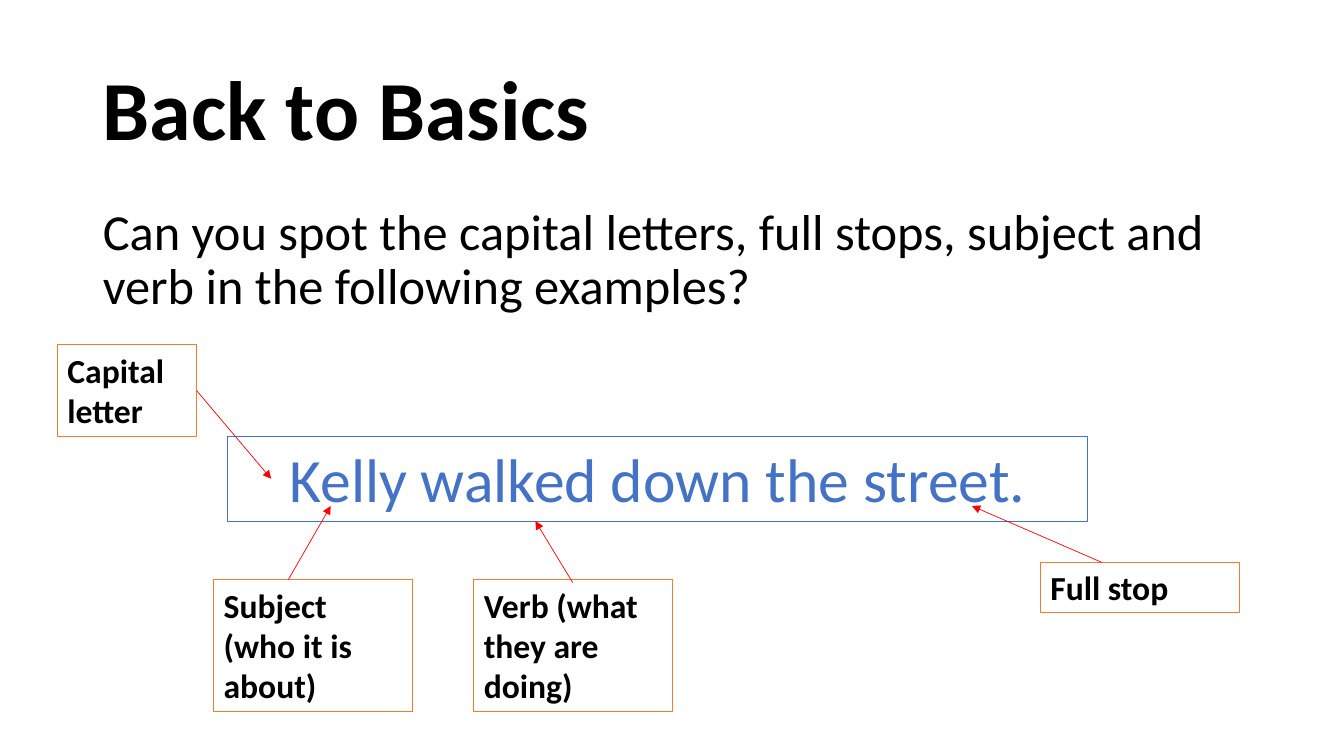
"""Build the "Back to Basics" sentence-parts slide."""
import lxml.etree
import pptx
import pptx.dml.color
import pptx.enum.shapes
import pptx.enum.text
import pptx.oxml.ns
import pptx.util

Inches = pptx.util.Inches
Alignment = pptx.enum.text.PP_ALIGN
Anchor = pptx.enum.text.MSO_ANCHOR
AutoSize = pptx.enum.text.MSO_AUTO_SIZE
qualified = pptx.oxml.ns.qn

COLORS = {"text": "000000", "sentence": "4472C4", "label": "ED7D31", "arrow": "FF0000"}


def color(name):
    return pptx.dml.color.RGBColor.from_string(COLORS[name])


def write_text(shape, text, size, color_name="text", bold=False, align=Alignment.LEFT,
               anchor=Anchor.TOP, auto_size=AutoSize.NONE, line_spacing=1.0, space_before=0):
    frame = shape.text_frame
    frame.word_wrap = True
    frame.auto_size = auto_size
    frame.vertical_anchor = anchor
    paragraph = frame.paragraphs[0]
    paragraph.alignment = align
    paragraph.line_spacing = line_spacing
    paragraph.space_before = pptx.util.Pt(space_before)
    run = paragraph.add_run()
    run.text = text
    run.font.name = "Calibri"
    run.font.size = pptx.util.Pt(size)
    run.font.bold = bold
    run.font.color.rgb = color(color_name)
    return paragraph


presentation = pptx.Presentation()
presentation.slide_width = Inches(13.33)
presentation.slide_height = Inches(7.5)
slide = presentation.slides.add_slide(presentation.slide_layouts[1])

title = slide.shapes.title
body = slide.placeholders[1]
for placeholder, top, height in [(title, 0.4, 1.45), (body, 2, 1.26)]:
    placeholder.left, placeholder.top = Inches(0.92), Inches(top)
    placeholder.width, placeholder.height = Inches(11.5), Inches(height)

write_text(title, "Back to Basics", size=60, bold=True, anchor=Anchor.MIDDLE, line_spacing=0.9)
question = write_text(
    body, "Can you spot the capital letters, full stops, subject and verb in the following examples?",
    size=36, line_spacing=0.9, space_before=10)
properties = question._p.get_or_add_pPr()
properties.set("marL", "0")
properties.set("indent", "0")
lxml.etree.SubElement(properties, qualified("a:buNone"))

label_format = {"size": 24, "bold": True}
sentence_format = {"size": 44, "color_name": "sentence", "align": Alignment.CENTER}
boxes = [
    ("Kelly walked down the street.", 2.26, 4.33, 8.53, 0.84, "sentence", sentence_format),
    ("Capital letter", 0.57, 3.42, 1.38, 0.91, "label", label_format),
    ("Subject (who it is about)", 2.12, 5.75, 1.97, 1.31, "label", label_format),
    ("Verb (what they are doing)", 4.7, 5.75, 1.97, 1.31, "label", label_format),
    ("Full stop", 10.32, 5.58, 1.97, 0.5, "label", label_format),
]
shapes = {}
for text, left, top, width, height, outline, text_format in boxes:
    box = slide.shapes.add_shape(pptx.enum.shapes.MSO_SHAPE.RECTANGLE,
                                 Inches(left), Inches(top), Inches(width), Inches(height))
    box.shadow.inherit = False
    box.fill.background()
    box.line.color.rgb = color(outline)
    box.line.width = pptx.util.Pt(0.75)
    write_text(box, text, auto_size=AutoSize.SHAPE_TO_FIT_TEXT, **text_format)
    shapes[text] = box

arrows = [
    (1.95, 3.87, 2.69, 4.75, "Capital letter"),
    (2.86, 5.75, 3.28, 5.02, None),
    (5.68, 5.78, 5.31, 5.17, None),
    (10.93, 5.58, 9.64, 5.02, None),
]
for start_x, start_y, end_x, end_y, source in arrows:
    arrow = slide.shapes.add_connector(pptx.enum.shapes.MSO_CONNECTOR.STRAIGHT,
                                       Inches(start_x), Inches(start_y), Inches(end_x), Inches(end_y))
    if source:
        arrow.begin_connect(shapes[source], 3)
    arrow.line.color.rgb = color("arrow")
    arrow.line.width = pptx.util.Pt(0.5)
    lxml.etree.SubElement(arrow.line._get_or_add_ln(), qualified("a:tailEnd"), type="triangle")
    lxml.etree.SubElement(arrow._element.spPr, qualified("a:effectLst"))

presentation.save("out.pptx")
